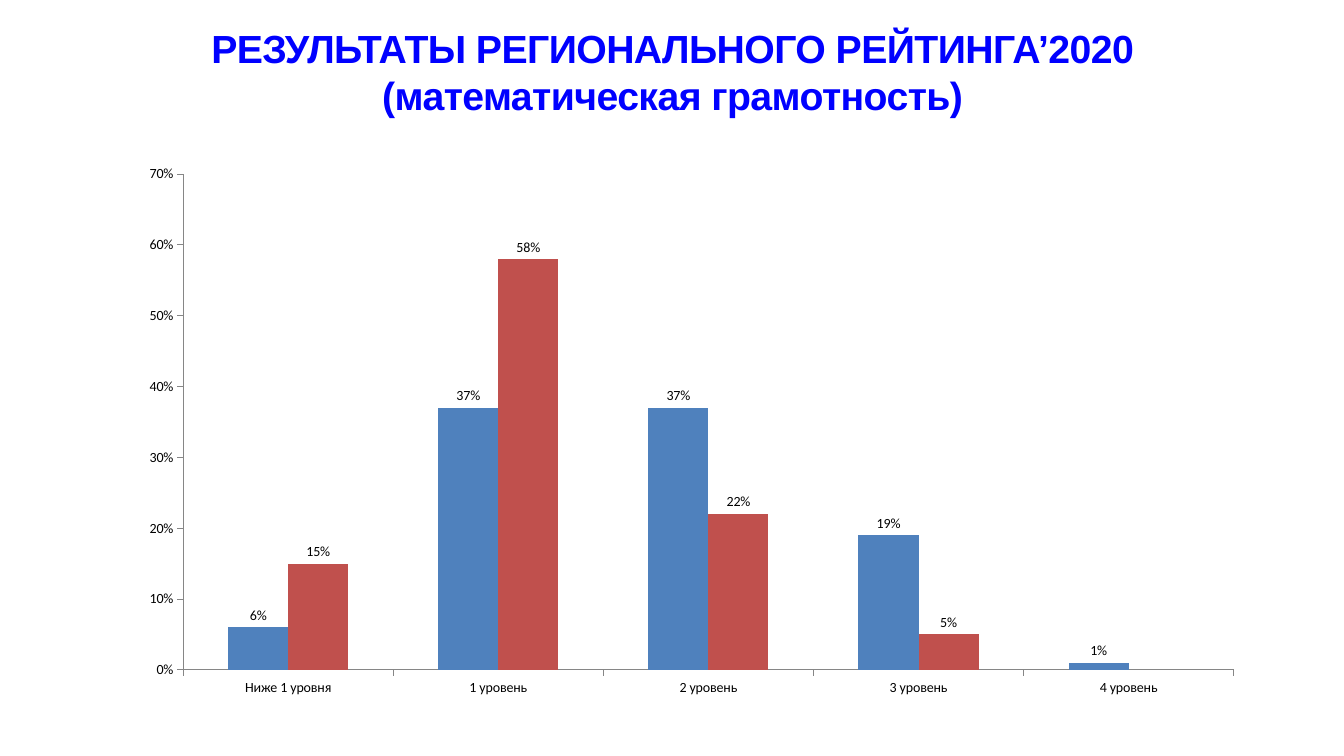
from dataclasses import dataclass
from typing import Optional

import pptx
import pptx.chart.chart
import pptx.chart.data
import pptx.dml.color
import pptx.enum.chart
import pptx.enum.text
import pptx.slide
import pptx.util

PX = 9144  # EMU in one px, 100 px to the inch


@dataclass(frozen=True)
class Theme:
    title_color: str = "0000FF"
    text_color: str = "000000"
    axis_color: str = "868686"
    grid_color: str = "FFFFFF"
    title_font: str = "Arial"
    chart_font: str = "Calibri"
    title_size: int = 28
    chart_size: int = 10
    title_spacing: int = -40  # hundredths of a point


@dataclass(frozen=True)
class Box:
    left: int
    top: int
    width: int
    height: int

    def emu(self) -> list[int]:
        return [v * PX for v in (self.left, self.top, self.width, self.height)]


@dataclass(frozen=True)
class Series:
    name: str
    values: tuple[Optional[float], ...]
    color: str


THEME = Theme()
TITLE_BOX = Box(67, 30, 1200, 81)
CHART_BOX = Box(126, 154, 1120, 547)
TITLE_LINES = ("РЕЗУЛЬТАТЫ РЕГИОНАЛЬНОГО РЕЙТИНГА’2020", "(математическая грамотность)")
LEVELS = ("Ниже 1 уровня", "1 уровень", "2 уровень", "3 уровень", "4 уровень")
SERIES = (
    Series("Series 1", (0.06, 0.37, 0.37, 0.19, 0.01), "4F81BD"),
    Series("Series 2", (0.15, 0.58, 0.22, 0.05, None), "C0504D"),
)


def rgb(color: str) -> pptx.dml.color.RGBColor:
    return pptx.dml.color.RGBColor.from_string(color)


def apply(target: object, values: dict[str, object]) -> None:
    for name, value in values.items():
        setattr(target, name, value)


def format_font(font: object, name: str, size: int, color: str, bold: bool) -> None:
    apply(font, {"name": name, "size": pptx.util.Pt(size), "bold": bold})
    font.color.rgb = rgb(color)


def draw_title(slide: pptx.slide.Slide) -> None:
    sp = slide.shapes.title
    apply(sp, dict(zip(("left", "top", "width", "height"), TITLE_BOX.emu())))
    tf = sp.text_frame
    apply(tf, {
        "margin_left": 11 * PX, "margin_right": 11 * PX,
        "margin_top": 6 * PX, "margin_bottom": 6 * PX,
        "word_wrap": True,
        "auto_size": pptx.enum.text.MSO_AUTO_SIZE.NONE,
        "vertical_anchor": pptx.enum.text.MSO_ANCHOR.MIDDLE,
    })
    p = tf.paragraphs[0]
    p.alignment = pptx.enum.text.PP_ALIGN.CENTER
    for i, line in enumerate(TITLE_LINES):
        if i:
            p.add_line_break()
        r = p.add_run()
        r.text = line
        format_font(r.font, THEME.title_font, THEME.title_size, THEME.title_color, True)
        r._r.get_or_add_rPr().set("spc", str(THEME.title_spacing))


def format_axes(chart: pptx.chart.chart.Chart) -> None:
    for axis in (chart.category_axis, chart.value_axis):
        apply(axis, {
            "major_tick_mark": pptx.enum.chart.XL_TICK_MARK.OUTSIDE,
            "minor_tick_mark": pptx.enum.chart.XL_TICK_MARK.NONE,
        })
        axis.format.line.color.rgb = rgb(THEME.axis_color)
        axis.format.line.width = pptx.util.Pt(0.75)
    chart.category_axis.has_major_gridlines = False
    values = chart.value_axis
    apply(values, {"minimum_scale": 0, "maximum_scale": 0.7, "major_unit": 0.1,
                   "has_major_gridlines": True})
    apply(values.tick_labels, {"number_format": "0%", "number_format_is_linked": False})
    values.major_gridlines.format.line.color.rgb = rgb(THEME.grid_color)
    values.major_gridlines.format.line.width = pptx.util.Pt(0.75)


def draw_chart(slide: pptx.slide.Slide) -> None:
    data = pptx.chart.data.CategoryChartData(number_format="0%")
    data.categories = LEVELS
    for series in SERIES:
        data.add_series(series.name, series.values)
    chart = slide.shapes.add_chart(
        pptx.enum.chart.XL_CHART_TYPE.COLUMN_CLUSTERED, *CHART_BOX.emu(), data
    ).chart
    apply(chart, {"has_title": False, "has_legend": False})
    format_font(chart.font, THEME.chart_font, THEME.chart_size, THEME.text_color, False)
    format_axes(chart)

    # Columns and their labels
    plot = chart.plots[0]
    apply(plot, {"gap_width": 150, "overlap": 0, "vary_by_categories": False})
    for bars, series in zip(plot.series, SERIES):
        bars.format.fill.solid()
        bars.format.fill.fore_color.rgb = rgb(series.color)
        apply(bars.data_labels, {
            "show_value": True, "number_format": "0%", "number_format_is_linked": False,
            "position": pptx.enum.chart.XL_LABEL_POSITION.OUTSIDE_END,
        })


def main() -> None:
    prs = pptx.Presentation()
    apply(prs, {"slide_width": 1333 * PX, "slide_height": 750 * PX})
    slide = prs.slides.add_slide(prs.slide_layouts[5])  # title only
    draw_title(slide)
    draw_chart(slide)
    prs.save("out.pptx")


if __name__ == "__main__":
    main()
